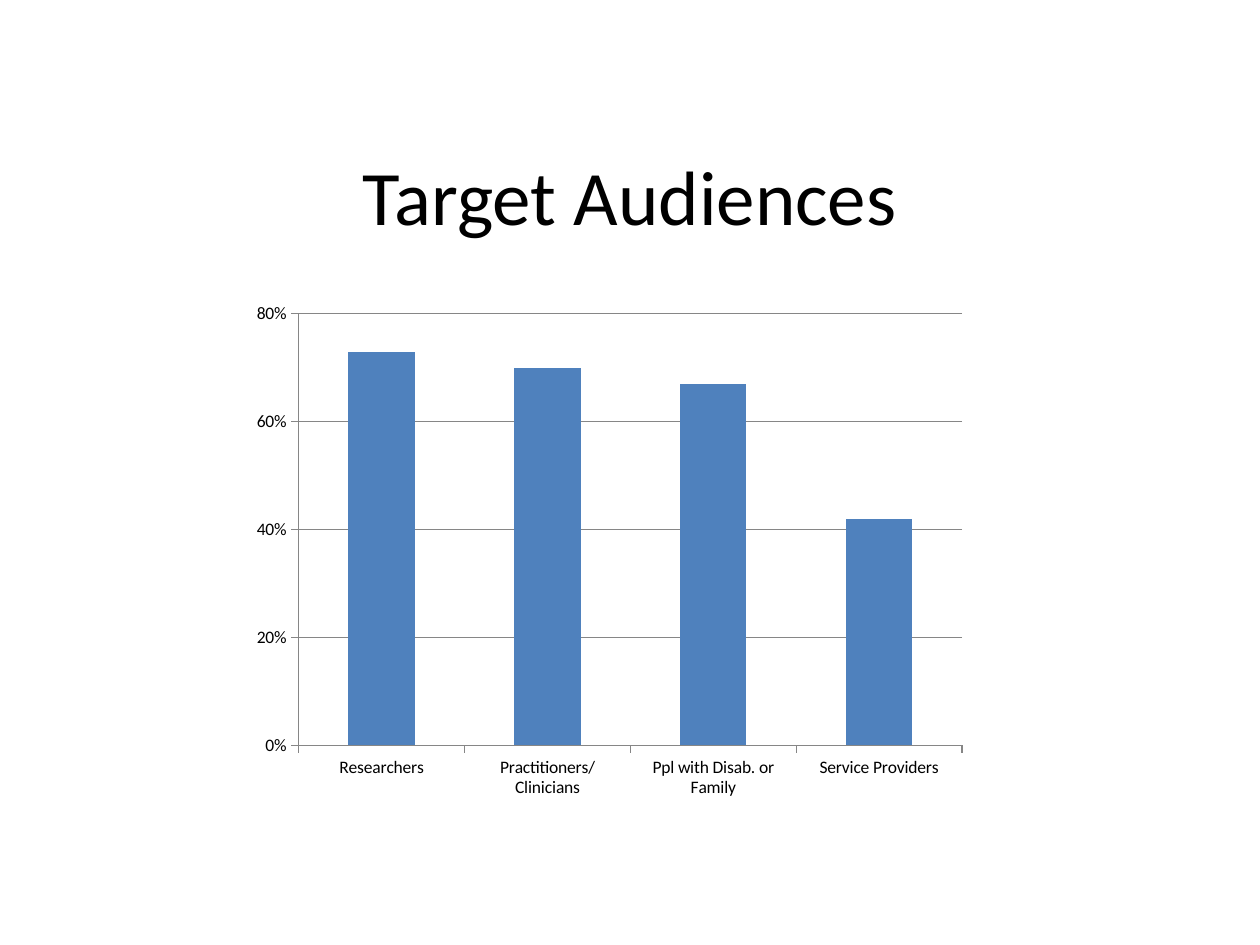
from pptx import Presentation
from pptx.chart.data import CategoryChartData
from pptx.dml.color import RGBColor
from pptx.enum.chart import XL_CHART_TYPE, XL_TICK_MARK
from pptx.enum.text import MSO_ANCHOR, PP_ALIGN
from pptx.util import Cm, Pt


def color(hex_value):
    return RGBColor.from_string(hex_value)


def format_font(font, size):
    values = {"name": "Calibri", "size": Pt(size), "bold": False}
    for name, value in values.items():
        setattr(font, name, value)
    font.color.rgb = color("000000")


presentation = Presentation()
presentation.slide_width = Cm(25.4)
presentation.slide_height = Cm(19.05)
slide = presentation.slides.add_slide(presentation.slide_layouts[5])

# Title
title = slide.shapes.title
title_box = {"left": Cm(1.27), "top": Cm(2.34), "width": Cm(22.86), "height": Cm(3.18)}
for name, value in title_box.items():
    setattr(title, name, value)
title.text_frame.text = "Target Audiences"
title.text_frame.vertical_anchor = MSO_ANCHOR.MIDDLE
paragraph = title.text_frame.paragraphs[0]
paragraph.alignment = PP_ALIGN.CENTER
format_font(paragraph.font, 44)

# Share of each audience
audiences = {
    "Researchers": 0.73,
    "Practitioners/Clinicians": 0.70,
    "Ppl with Disab. or Family": 0.67,
    "Service Providers": 0.42,
}
chart_data = CategoryChartData()
chart_data.categories = list(audiences)
chart_data.add_series("Series 1", list(audiences.values()))
chart = slide.shapes.add_chart(
    XL_CHART_TYPE.COLUMN_CLUSTERED, Cm(4.88), Cm(5.92), Cm(14.81), Cm(10.36), chart_data
).chart
chart.has_legend = False
chart.has_title = False
format_font(chart.font, 10)

plot = chart.plots[0]
plot.gap_width = 150
plot.vary_by_categories = False
fill = plot.series[0].format.fill
fill.solid()
fill.fore_color.rgb = color("4F81BD")

value_axis = chart.value_axis
axis_values = {
    "minimum_scale": 0,
    "maximum_scale": 0.8,
    "major_unit": 0.2,
    "has_major_gridlines": True,
}
for name, value in axis_values.items():
    setattr(value_axis, name, value)
value_axis.tick_labels.number_format = "0%"
value_axis.tick_labels.number_format_is_linked = False

for axis in (chart.category_axis, value_axis):
    axis.major_tick_mark = XL_TICK_MARK.OUTSIDE
    axis.minor_tick_mark = XL_TICK_MARK.NONE
for part in (chart.category_axis, value_axis, value_axis.major_gridlines):
    part.format.line.color.rgb = color("868686")
    part.format.line.width = Pt(0.75)

presentation.save("out.pptx")
